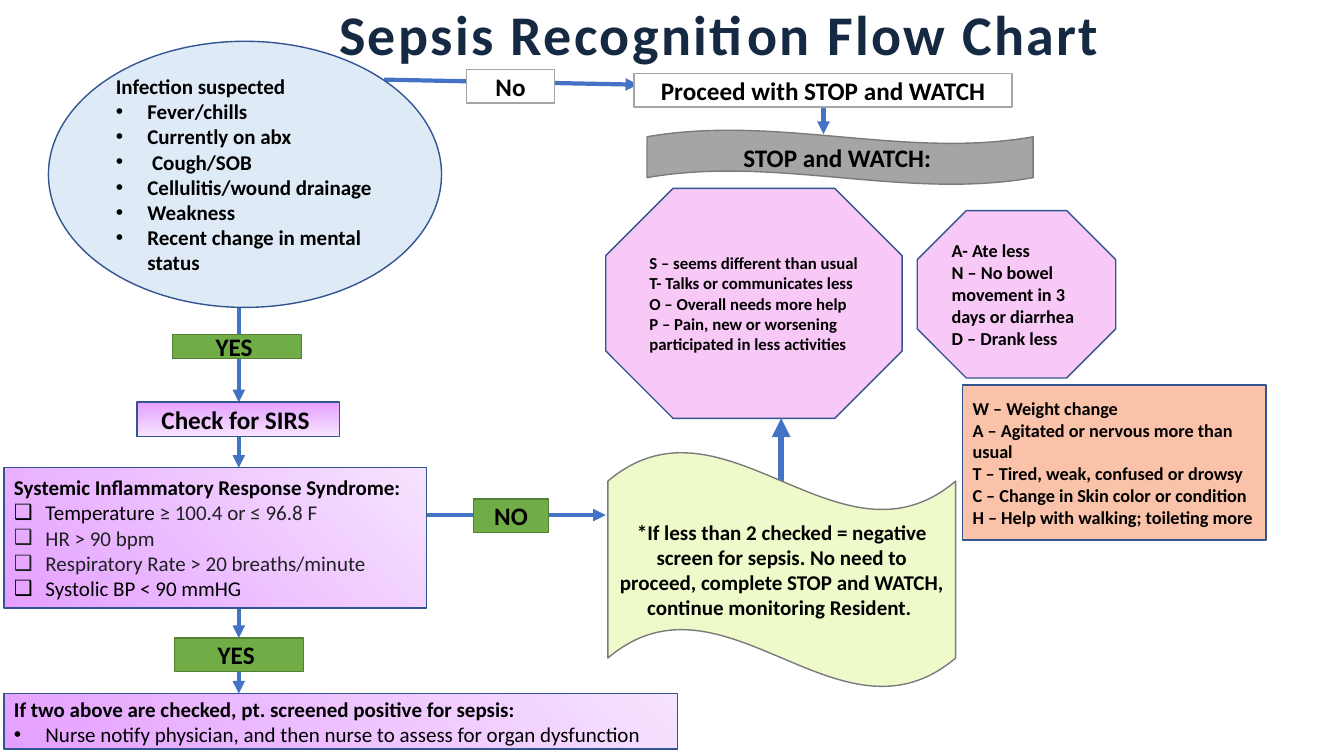
from pptx import Presentation
from pptx.dml.color import RGBColor
from pptx.enum.shapes import MSO_CONNECTOR, MSO_SHAPE
from pptx.enum.text import MSO_ANCHOR, PP_ALIGN
from pptx.oxml.ns import qn
from pptx.util import Pt
from lxml import etree

RECTANGLE, ELLIPSE = MSO_SHAPE.RECTANGLE, MSO_SHAPE.OVAL
OCTAGON, WAVE = MSO_SHAPE.OCTAGON, MSO_SHAPE.WAVE
LEFT, CENTER, RIGHT = PP_ALIGN.LEFT, PP_ALIGN.CENTER, PP_ALIGN.RIGHT
MIDDLE = MSO_ANCHOR.MIDDLE
STRAIGHT = MSO_CONNECTOR.STRAIGHT

BLACK = RGBColor(0x00, 0x00, 0x00)
CHARCOAL = RGBColor(0x20, 0x21, 0x24)
NAVY = RGBColor(0x16, 0x29, 0x42)
WHITE = RGBColor(0xFF, 0xFF, 0xFF)
PALE_BLUE = RGBColor(0xDE, 0xEB, 0xF7)
GREEN = RGBColor(0x70, 0xAD, 0x47)
GRAY = RGBColor(0xA5, 0xA5, 0xA5)
PINK = RGBColor(0xF8, 0xC8, 0xF6)
PEACH = RGBColor(0xF9, 0xC2, 0xA9)
LIME = RGBColor(0xEF, 0xFA, 0xCA)
VIOLET = RGBColor(0xE5, 0xA0, 0xFF)
PALE_VIOLET = RGBColor(0xF6, 0xE3, 0xFF)
BLUE_LINE = RGBColor(0x32, 0x54, 0x91)
GREEN_LINE = RGBColor(0x53, 0x80, 0x35)
GRAY_LINE = RGBColor(0x7A, 0x7A, 0x7A)
ARROW_BLUE = RGBColor(0x44, 0x72, 0xC4)

FONT = "Calibri"
INDENT = Pt(22.5)
FLOW_X = 170.6  # axis of the left-hand column


def write_text(shape, lines, size=18, align=CENTER, color=BLACK, bullet=None, bold_items=True):
    """Fill a shape with lines; with a bullet, all lines after the first are items.

    A line is a string or a list of (text, color) runs.
    """
    frame = shape.text_frame
    frame.word_wrap = True
    for index, line in enumerate(lines):
        paragraph = frame.paragraphs[0] if index == 0 else frame.add_paragraph()
        paragraph.alignment = align
        is_item = bullet is not None and index > 0
        if is_item:
            properties = paragraph._p.get_or_add_pPr()
            properties.set("marL", str(INDENT))
            properties.set("indent", str(-INDENT))
            etree.SubElement(properties, qn("a:buFont")).set("typeface", "Arial")
            etree.SubElement(properties, qn("a:buChar")).set("char", bullet)
        for text, run_color in [(line, color)] if isinstance(line, str) else line:
            run = paragraph.add_run()
            run.text = text
            run.font.name = FONT
            run.font.size = Pt(size)
            run.font.bold = bold_items or not is_item
            run.font.color.rgb = run_color


def add_box(kind, bounds, fill, line, lines, gradient=None, **text_format):
    """Add an outlined shape; gradient is None, "down" or "corner"."""
    shape = slide.shapes.add_shape(kind, *map(Pt, bounds))
    shape.shadow.inherit = False
    if gradient:
        shape.fill.gradient()
        shape.fill.gradient_angle = 270
        for stop, stop_color in zip(shape.fill.gradient_stops, (fill, PALE_VIOLET)):
            stop.color.rgb = stop_color
        if gradient == "corner":
            linear = shape._element.spPr.find(".//" + qn("a:lin"))
            circle = etree.Element(qn("a:path"), {"path": "circle"})
            etree.SubElement(circle, qn("a:fillToRect"), {"t": "100000", "r": "100000"})
            linear.getparent().replace(linear, circle)
    else:
        shape.fill.solid()
        shape.fill.fore_color.rgb = fill
    shape.line.color.rgb = line
    shape.line.width = Pt(1)
    shape.text_frame.vertical_anchor = MIDDLE
    write_text(shape, lines, **text_format)


presentation = Presentation()
presentation.slide_width, presentation.slide_height = Pt(960), Pt(540)
slide = presentation.slides.add_slide(presentation.slide_layouts[6])

# Arrows, behind the boxes: start x, start y, end x, end y, width
arrows = [
    (FLOW_X, 209.5, FLOW_X, 287.3, 3),
    (FLOW_X, 311.8, FLOW_X, 334.1, 3),
    (FLOW_X, 428.4, FLOW_X, 455.8, 3),
    (FLOW_X, 479.5, FLOW_X, 495.4, 3),
    (274.3, 56.9, 455.8, 60.5, 3),
    (588.2, 76.3, 588.2, 95.8, 3),
    (303.8, 367.9, 432.7, 367.9, 3),
    (558, 343.4, 558, 298.8, 4.5),
]
for *ends, width in arrows:
    arrow = slide.shapes.add_connector(STRAIGHT, *map(Pt, ends))
    arrow.line.color.rgb = ARROW_BLUE
    arrow.line.width = Pt(width)
    etree.SubElement(arrow.line._get_or_add_ln(), qn("a:tailEnd")).set("type", "triangle")
    etree.SubElement(arrow._element.spPr, qn("a:effectLst"))

# Title
title = slide.shapes.add_textbox(Pt(179.3), Pt(0), Pt(617), Pt(48.2))
title_frame = title.text_frame
title_frame.margin_left = title_frame.margin_right = 0
title_frame.margin_top = title_frame.margin_bottom = 0
write_text(title, ["Sepsis Recognition Flow Chart "], size=40, align=RIGHT, color=NAVY)
title_frame.paragraphs[0].runs[0].font._element.set("spc", "170")

# Left column: infection, SIRS check and positive screen
add_box(ELLIPSE, (34.6, 29.5, 280.8, 190.1), PALE_BLUE, BLUE_LINE, [
    "Infection suspected",
    "Fever/chills",
    "Currently on abx",
    " Cough/SOB",
    "Cellulitis/wound drainage",
    "Weakness",
    "Recent change in mental status",
], size=15, align=LEFT, bullet="•")
add_box(RECTANGLE, (97.9, 287.3, 144.7, 24.5), VIOLET, BLUE_LINE,
        ["Check for SIRS "], gradient="down")
add_box(RECTANGLE, (2.9, 334.1, 301.7, 100.1), VIOLET, BLUE_LINE, [
    "Systemic Inflammatory Response Syndrome:",
    [("Temperature ", BLACK), ("≥ 100.4 or ≤ 96.8 F", CHARCOAL)],
    [("HR > 90 bpm", CHARCOAL)],
    [("Respiratory Rate > 20 breaths/minute", CHARCOAL)],
    "Systolic BP < 90 mmHG",
], gradient="corner", size=15, align=LEFT, bullet="❑", bold_items=False)
add_box(RECTANGLE, (2.9, 495.4, 481, 39.6), VIOLET, BLUE_LINE, [
    "If two above are checked, pt. screened positive for sepsis:",
    "Nurse notify physician, and then nurse to assess for organ dysfunction",
], gradient="corner", size=15, align=LEFT, bullet="•", bold_items=False)

# Answers on the arrows
answers = [
    ("YES ", (123.1, 239, 92.2, 17.3), GREEN, GREEN_LINE),
    ("YES ", (124.6, 455.8, 92.2, 23.8), GREEN, GREEN_LINE),
    ("NO", (338.4, 356.4, 53.3, 23.8), GREEN, GREEN_LINE),
    ("No", (333.4, 49.7, 62.6, 23.8), WHITE, GRAY),
]
for answer, bounds, fill, line in answers:
    add_box(RECTANGLE, bounds, fill, line, [answer])

# Right side: STOP and WATCH
add_box(RECTANGLE, (452.9, 52.6, 270, 23.8), WHITE, GRAY, ["Proceed with STOP and WATCH"])
add_box(WAVE, (462.2, 92.9, 275.8, 38.9), GRAY, GRAY_LINE, ["STOP and WATCH: "])
add_box(OCTAGON, (432.7, 134.6, 211.7, 164.2), PINK, BLUE_LINE, [
    "S – seems different than usual",
    "T- Talks or communicates less",
    "O – Overall needs more help",
    "P – Pain, new or worsening participated in less activities",
], size=12, align=LEFT)
add_box(OCTAGON, (655.2, 150.5, 141.8, 119.5), PINK, BLUE_LINE, [
    "A- Ate less",
    "N – No bowel movement in 3 days or diarrhea",
    "D – Drank less",
], size=13, align=LEFT)
add_box(RECTANGLE, (687.6, 275, 216.7, 110.9), PEACH, BLUE_LINE, [
    "W – Weight change",
    "A – Agitated or nervous more than usual",
    "T – Tired, weak, confused or drowsy",
    "C – Change in Skin color or condition",
    "H – Help with walking; toileting more",
], size=13, align=LEFT)
add_box(WAVE, (434.2, 322.6, 248.4, 168.5), LIME, GRAY_LINE, [
    "*If less than 2 checked = negative screen for sepsis. No need to proceed, "
    "complete STOP and WATCH, continue monitoring Resident. ",
], size=15)

presentation.save("out.pptx")
